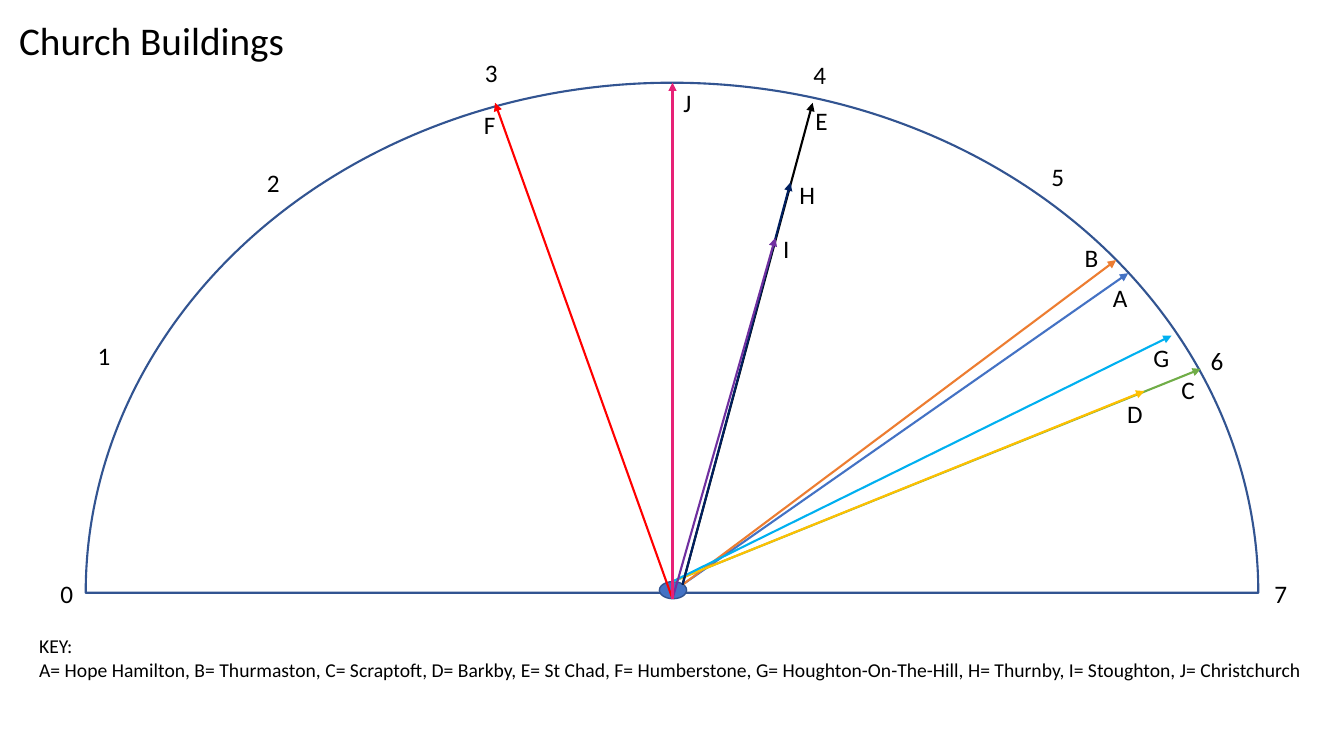
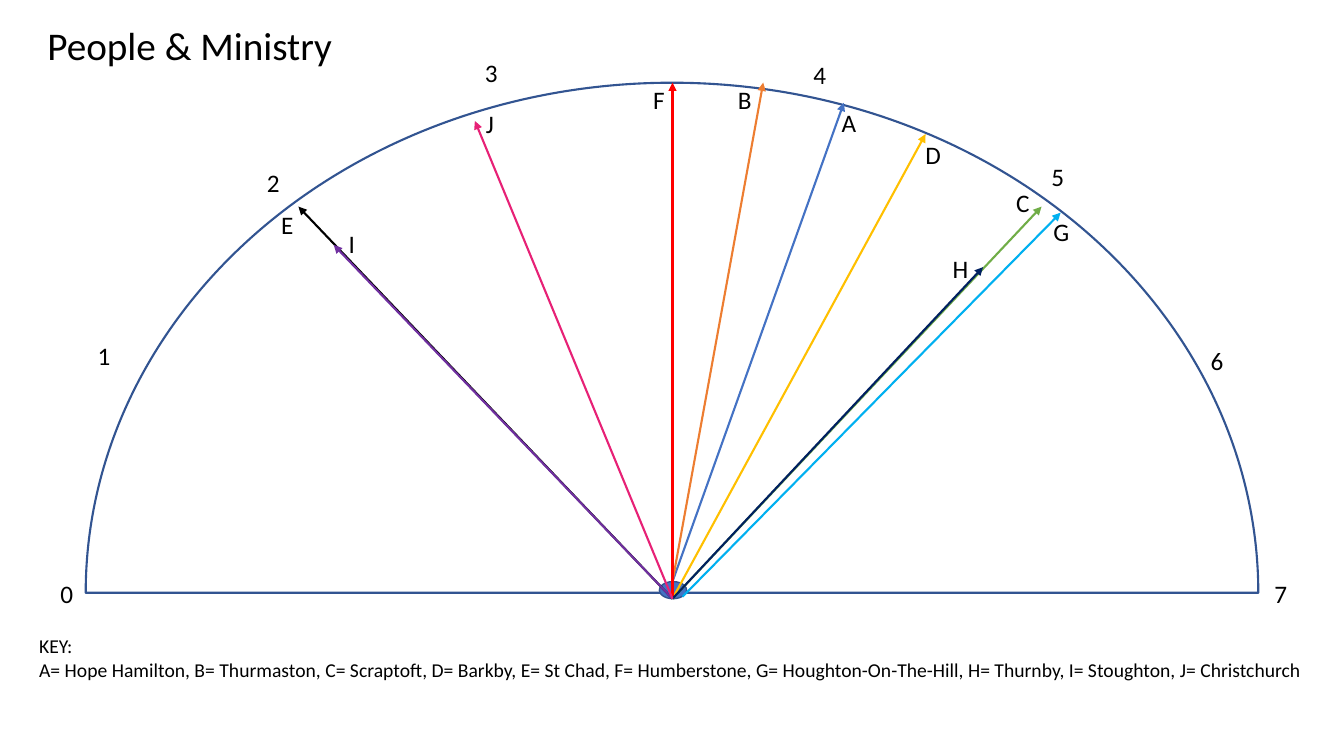
from lxml.etree import SubElement
from pptx import Presentation
from pptx.dml.color import RGBColor
from pptx.enum.shapes import MSO_CONNECTOR as Connector, MSO_SHAPE as Shape
from pptx.enum.text import MSO_ANCHOR as Anchor, PP_ALIGN as Align
from pptx.oxml.ns import qn
from pptx.util import Inches, Pt

FONT = "Calibri"
COLOURS = {
    "text": "000000", "outline": "325491", "hub": "4472C4",
    "A": "4472C4", "B": "ED7D31", "C": "70AD47", "D": "FFC000", "E": "000000",
    "F": "FF0000", "G": "00B0F0", "H": "002060", "I": "7030A0", "J": "E72176",
}
CHURCHES = {
    "A": "Hope Hamilton", "B": "Thurmaston", "C": "Scraptoft", "D": "Barkby",
    "E": "St Chad", "F": "Humberstone", "G": "Houghton-On-The-Hill",
    "H": "Thurnby", "I": "Stoughton", "J": "Christchurch",
}
SCALE = [(0.5, 5.69), (0.87, 3.33), (2.55, 1.61), (4.71, 0.52),
         (7.97, 0.54), (10.33, 1.55), (11.91, 3.38), (12.54, 5.69)]

HUB_TOP, HUB_BOTTOM = (6.67, 5.77), (6.67, 5.94)
HUB_RIGHT, HUB_LOWER_RIGHT = (6.77, 5.8), (6.77, 5.92)

# letter: (arrow start, arrow tip, label corner)
BUILDINGS = {
    "A": (HUB_RIGHT, (11.19, 2.71), (10.94, 2.75)),
    "B": (HUB_RIGHT, (11.07, 2.58), (10.66, 2.36)),
    "C": (HUB_TOP, (11.91, 3.66), (11.62, 3.66)),
    "D": (HUB_TOP, (11.35, 3.88), (11.08, 3.9)),
    "E": (HUB_RIGHT, (8.06, 1.02), (7.99, 1)),
    "F": (HUB_BOTTOM, (4.91, 1.02), (4.7, 1.04)),
    "G": (HUB_TOP, (11.62, 3.33), (11.34, 3.35)),
    "H": (HUB_RIGHT, (7.84, 1.81), (7.83, 1.73)),
    "I": (HUB_BOTTOM, (7.69, 2.36), (7.67, 2.27)),
    "J": (HUB_BOTTOM, (6.67, 0.82), (6.68, 0.82)),
}
MINISTRY = {
    "A": (HUB_TOP, (8.37, 1.02), (8.25, 1.02)),
    "B": (HUB_TOP, (7.57, 0.82), (7.22, 0.79)),
    "C": (HUB_BOTTOM, (10.33, 2.05), (9.98, 1.81)),
    "D": (HUB_BOTTOM, (9.18, 1.33), (9.08, 1.33)),
    "E": (HUB_BOTTOM, (2.96, 2.05), (2.69, 2.03)),
    "F": (HUB_BOTTOM, (6.67, 0.82), (6.38, 0.79)),
    "G": (HUB_LOWER_RIGHT, (10.52, 2.11), (10.35, 2.1)),
    "H": (HUB_BOTTOM, (9.75, 2.65), (9.35, 2.46)),
    "I": (HUB_BOTTOM, (3.31, 2.43), (3.36, 2.22)),
    "J": (HUB_BOTTOM, (4.71, 1.2), (4.72, 1.03)),
}


def colour(name):
    """Return the named colour."""
    return RGBColor.from_string(COLOURS[name])


def write(box, text, size):
    """Fill a box with left-aligned text from its top."""
    frame = box.text_frame
    frame.text = text
    frame.word_wrap = True
    frame.vertical_anchor = Anchor.TOP
    for para in frame.paragraphs:
        para.alignment = Align.LEFT
        para.line_spacing = 1.0
        for span in para.runs:
            span.font.name = FONT
            span.font.size = Pt(size)
            span.font.color.rgb = colour("text")


def add_text(shapes, text, corner, width=0.4, height=0.4, size=18):
    """Add a text box at a corner point."""
    box = shapes.add_textbox(*map(Inches, (*corner, width, height)))
    write(box, text, size)


def add_outlined(shapes, kind, bounds, weight, fill=None):
    """Add a preset shape with the shared outline."""
    shape = shapes.add_shape(kind, *map(Inches, bounds))
    shape.shadow.inherit = False
    shape.line.color.rgb = colour("outline")
    shape.line.width = Pt(weight)
    if fill:
        shape.fill.solid()
        shape.fill.fore_color.rgb = colour(fill)
    else:
        shape.fill.background()
    return shape


def add_arrow(shapes, start, tip, name):
    """Add a coloured arrow from the hub to its tip."""
    arrow = shapes.add_connector(Connector.STRAIGHT, *map(Inches, start + tip))
    arrow.line.color.rgb = colour(name)
    arrow.line.width = Pt(1.5)
    properties = arrow.element.spPr
    SubElement(properties.find(qn("a:ln")), qn("a:tailEnd"), type="triangle")
    SubElement(properties, qn("a:effectLst"))


def add_gauge(page):
    """Add the half dial with its hub and numbers."""
    shapes = page.shapes.add_group_shape().shapes
    dial = add_outlined(shapes, Shape.PIE, (0.85, 0.82, 11.63, 10.12), 1.5)
    dial.adjustments[0] = 0
    dial.adjustments[1] = 108
    dial.rotation = 180
    add_outlined(shapes, Shape.OVAL, (6.54, 5.77, 0.27, 0.17), 1, "hub")
    for number, corner in enumerate(SCALE):
        add_text(shapes, str(number), corner, height=0.5)


def add_key(page):
    """Add the key to the church letters."""
    entries = ", ".join(f"{letter}= {name}" for letter, name in CHURCHES.items())
    add_text(page.shapes, f"KEY:\n{entries}", (0.29, 6.24), 13.04, 0.57, 14)


def add_page(deck, title, corner, ratings):
    """Add a slide that rates every church on the dial."""
    page = deck.slides.add_slide(deck.slide_layouts[5])
    heading = page.shapes.title
    heading.left, heading.top, heading.width, heading.height = map(
        Inches, (*corner, 6.07, 0.57))
    write(heading, title, 28)
    add_gauge(page)
    add_key(page)
    for letter, (start, tip, label) in ratings.items():
        add_arrow(page.shapes, start, tip, letter)
        add_text(page.shapes, letter, label)


def main():
    """Build and save the deck."""
    deck = Presentation()
    deck.slide_width, deck.slide_height = Inches(13.33), Inches(7.5)
    add_page(deck, "Church Buildings", (0.09, 0.11), BUILDINGS)
    add_page(deck, "People & Ministry", (0.37, 0.16), MINISTRY)
    deck.save("out.pptx")


if __name__ == "__main__":
    main()
